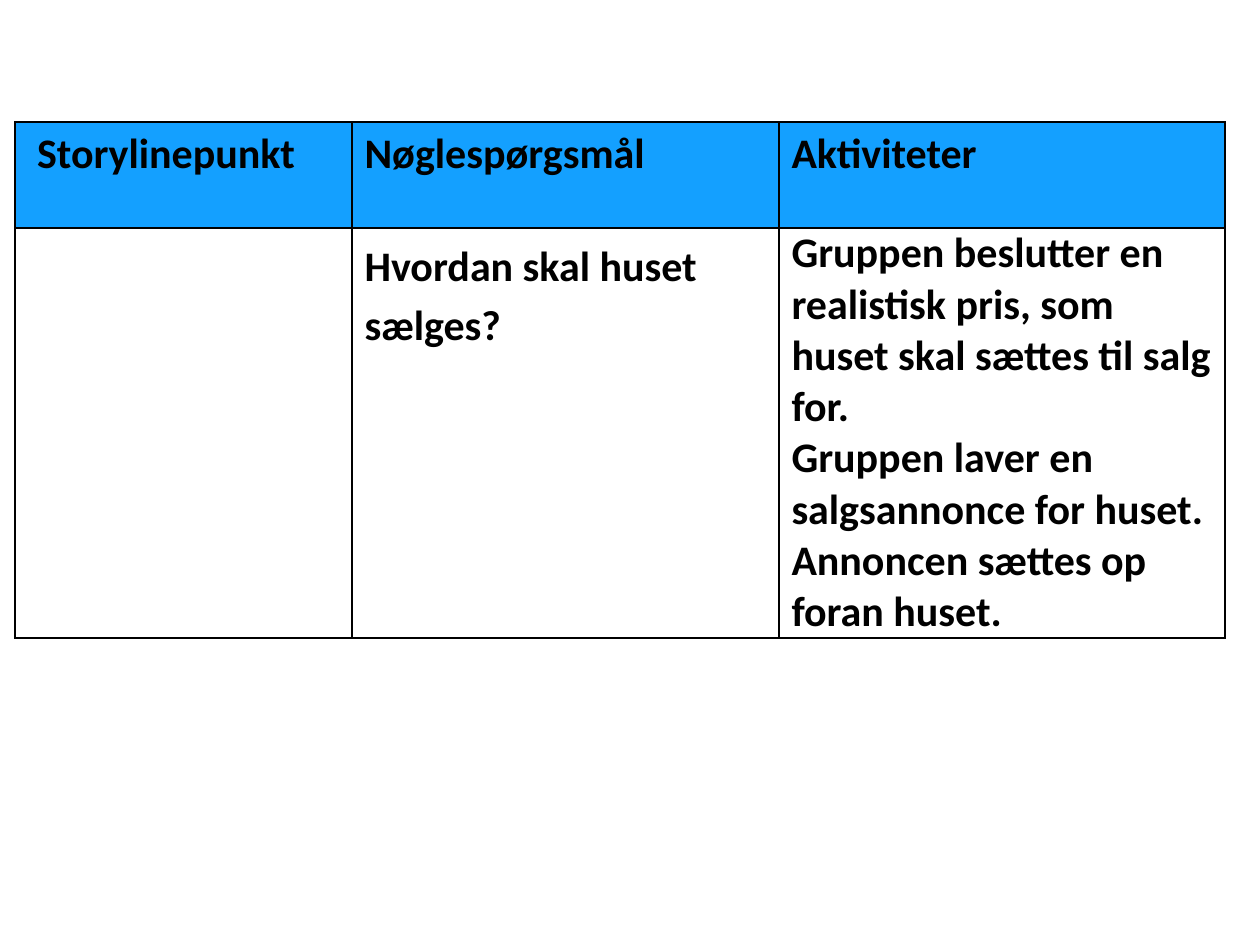
from lxml.etree import SubElement
from pptx import Presentation
from pptx.dml.color import RGBColor
from pptx.oxml.ns import qn
from pptx.util import Emu, Pt

SCALE = 914400 / 126


def px(length):
    return Emu(round(length * SCALE))


def color(value):
    return RGBColor.from_string(value)


class SlideBuilder:
    font = "Calibri"
    size = 24
    ink = "000000"
    header_fill = "14A0FF"
    body_fill = "FFFFFF"

    def __init__(self, deck):
        self.slide = deck.slides.add_slide(deck.slide_layouts[6])

    def add_text(self, cell, paragraphs, spacing=None):
        frame = cell.text_frame
        for index, text in enumerate(paragraphs):
            para = frame.add_paragraph() if index else frame.paragraphs[0]
            para.line_spacing = spacing
            run = para.add_run()
            run.text = text
            run.font.name = self.font
            run.font.size = Pt(self.size)
            run.font.bold = True
            run.font.color.rgb = color(self.ink)

    def add_border(self, cell):
        properties = cell._tc.get_or_add_tcPr()
        for side in ("lnL", "lnR", "lnT", "lnB"):
            line = SubElement(properties, qn(f"a:{side}"), w=str(Pt(1)))
            fill = SubElement(line, qn("a:solidFill"))
            SubElement(fill, qn("a:srgbClr"), val=self.ink)

    def add_table(self, left, top, widths, heights):
        frame = self.slide.shapes.add_table(
            len(heights), len(widths),
            px(left), px(top), px(sum(widths)), px(sum(heights)))
        table = frame.table
        table.first_row = False
        table.horz_banding = False
        for column, width in zip(table.columns, widths):
            column.width = px(width)
        for index, (row, height) in enumerate(zip(table.rows, heights)):
            row.height = px(height)
            for cell in row.cells:
                self.add_border(cell)
                cell.fill.solid()
                cell.fill.fore_color.rgb = color(
                    self.body_fill if index else self.header_fill)
        return table


def main():
    deck = Presentation()
    deck.slide_width, deck.slide_height = px(1260), px(945)
    builder = SlideBuilder(deck)

    plan = builder.add_table(15, 122, (337, 427, 446), (106, 340))
    headings = (" Storylinepunkt", "Nøglespørgsmål", "Aktiviteter")
    for column, heading in enumerate(headings):
        builder.add_text(plan.cell(0, column), [heading])

    builder.add_text(plan.cell(1, 1), ["Hvordan skal huset sælges?"], 1.15)

    activities = plan.cell(1, 2)
    activities.margin_top = activities.margin_bottom = 0
    builder.add_text(activities, [
        "Gruppen beslutter en realistisk pris, som huset skal sættes til salg for.",
        "Gruppen laver en salgsannonce for huset.",
        "Annoncen sættes op foran huset.",
    ])
    deck.save("out.pptx")


if __name__ == "__main__":
    main()
